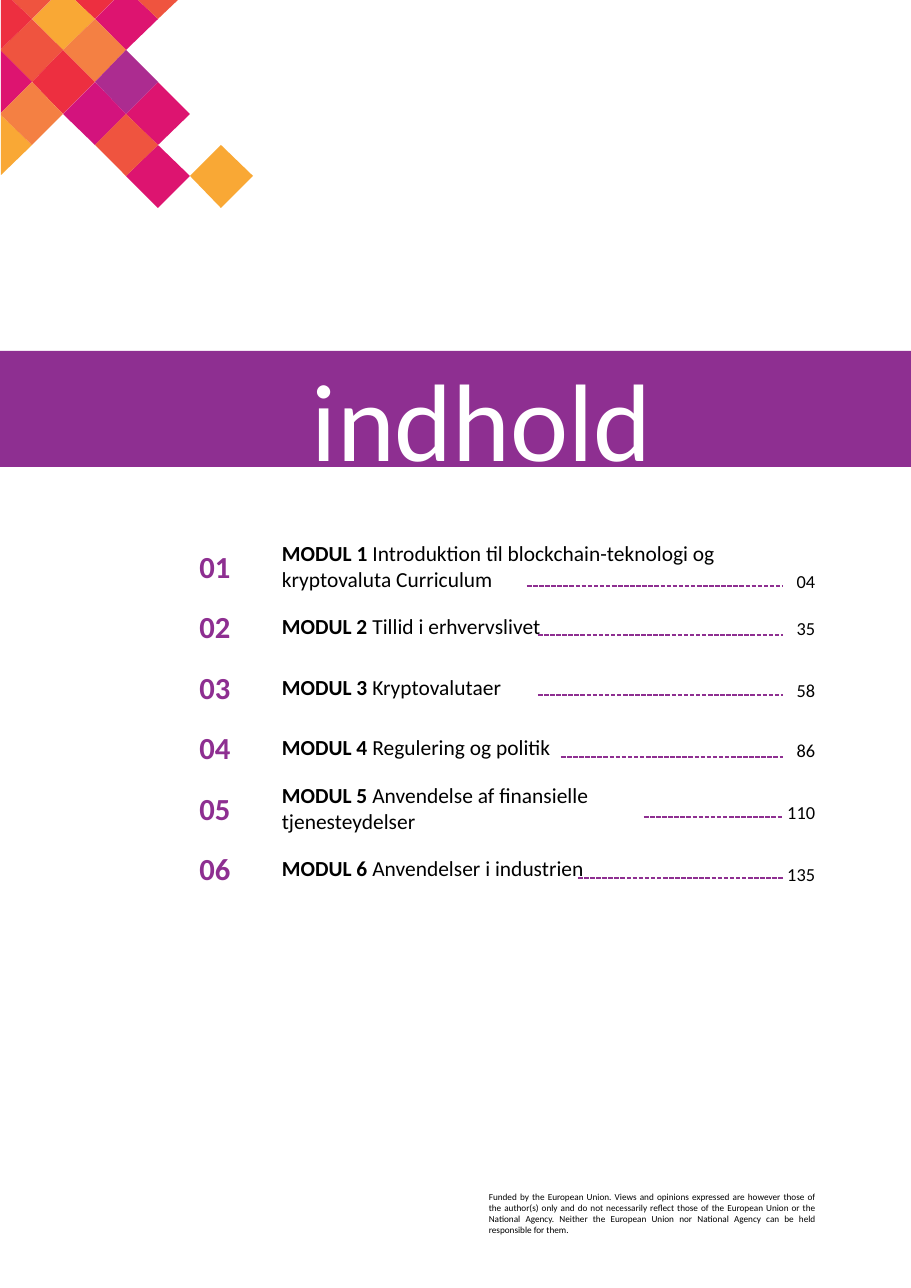
from pptx import Presentation
from pptx.dml.color import RGBColor
from pptx.enum.dml import MSO_LINE_DASH_STYLE as Dash
from pptx.enum.shapes import MSO_CONNECTOR_TYPE as Connector, MSO_SHAPE as Shape
from pptx.enum.text import MSO_ANCHOR as Anchor, PP_ALIGN as Align
from pptx.oxml.ns import qn
from pptx.util import Pt
from lxml.etree import SubElement

SCALE = 8301
PAGE_WIDTH, PAGE_HEIGHT = 911, 1288
FONT = "Calibri"
PURPLE, BLACK, WHITE = "8E2F91", "000000", "FFFFFF"
RED, PINK, ORANGE = "ED2F40", "DD1470", "EF543F"
YELLOW, APRICOT, VIOLET, MAGENTA = "F9A835", "F48043", "AC2C90", "D3137D"

TILES = [
    (3, -1, RED), (4, 0, PINK), (5, -1, ORANGE), (2, 0, YELLOW),
    (1, 1, ORANGE), (2, 2, RED), (3, 1, APRICOT), (0, 2, PINK),
    (0, 4, YELLOW), (1, 3, APRICOT), (7, 5, YELLOW), (5, 5, PINK),
    (5, 3, PINK), (4, 2, VIOLET), (3, 3, MAGENTA), (4, 4, ORANGE),
    (1, -1, ORANGE), (0, 0, RED),
]

FIRST_ROW, ROW_PITCH, ROW_HEIGHT = 545, 60.4, 42
LEADER_END = 783
MODULES = [
    ("Introduktion til blockchain-teknologi og kryptovaluta Curriculum", 479, "04", 560, 527, 586),
    ("Tillid i erhvervslivet", 427, "35", 607, 538, 635),
    ("Kryptovalutaer", 427, "58", 669, 538, 695),
    ("Regulering og politik", 427, "86", 729, 561, 757),
    ("Anvendelse af finansielle tjenesteydelser", 427, "110", 791, 644, 817),
    ("Anvendelser i industrien", 427, "135", 853, 578, 878),
]

FUNDING = (
    "Funded by the European Union. Views and opinions expressed are however "
    "those of the author(s) only and do not necessarily reflect those of the "
    "European Union or the National Agency. Neither the European Union nor "
    "National Agency can be held responsible for them."
)


def px(value):
    return round(value * SCALE)


def paint(target, color):
    target.solid()
    target.fore_color.rgb = RGBColor.from_string(color)


def finish_shape(shape, color):
    paint(shape.fill, color)
    shape.line.fill.background()
    shape.shadow.inherit = False


def add_band(page, top, height):
    band = page.shapes.add_shape(Shape.RECTANGLE, 0, px(top), px(PAGE_WIDTH), px(height))
    finish_shape(band, PURPLE)


def clip(points, axis, limit):
    kept = []
    for start, end in zip(points, points[1:] + points[:1]):
        if start[axis] >= limit:
            kept.append(start)
        if (start[axis] < limit) != (end[axis] < limit):
            share = (limit - start[axis]) / (end[axis] - start[axis])
            kept.append(tuple(a + share * (b - a) for a, b in zip(start, end)))
    return kept


def add_tile(page, column, row, color):
    corners = [(column, row - 1), (column + 1, row), (column, row + 1), (column - 1, row)]
    points = [(round(x * 253 / 8), round(19 + y * 31.5)) for x, y in corners]
    points = [(round(x), round(y)) for x, y in clip(clip(points, 0, 1), 1, 0)]
    outline = page.shapes.build_freeform(*points[0], scale=SCALE)
    outline.add_line_segments(points[1:], close=True)
    finish_shape(outline.convert_to_shape(), color)


def add_text(page, left, top, width, height, spans, size, color,
             align=Align.LEFT, anchor=Anchor.MIDDLE):
    box = page.shapes.add_textbox(px(left), px(top), px(width), px(height))
    frame = box.text_frame
    frame.word_wrap = True
    frame.vertical_anchor = anchor
    para = frame.paragraphs[0]
    para.alignment = align
    for text, bold in spans:
        span = para.add_run()
        span.text = text
        span.font.name = FONT
        span.font.size = Pt(size)
        span.font.bold = bold
        span.font.color.rgb = RGBColor.from_string(color)


def add_leader(page, left, y):
    leader = page.shapes.add_connector(
        Connector.STRAIGHT, px(left), px(y), px(LEADER_END), px(y))
    paint(leader.line.fill, PURPLE)
    leader.line.width = Pt(1)
    leader.line.dash_style = Dash.SQUARE_DOT
    SubElement(leader._element.spPr, qn("a:effectLst"))


def add_module(page, index, title, width, page_number, number_top, leader_left, leader_y):
    top = round(FIRST_ROW + index * ROW_PITCH)
    add_text(page, 176, top, 78, ROW_HEIGHT, [(f"{index + 1:02}", True)],
             20, PURPLE, Align.CENTER)
    add_text(page, 271, top, width, ROW_HEIGHT,
             [(f"MODUL {index + 1} ", True), (title, False)], 14, BLACK)
    add_text(page, 771, number_top, 55, ROW_HEIGHT, [(page_number, False)],
             12, BLACK, Align.RIGHT)
    add_leader(page, leader_left, leader_y)


def main():
    deck = Presentation()
    deck.slide_width, deck.slide_height = px(PAGE_WIDTH), px(PAGE_HEIGHT)
    page = deck.slides.add_slide(deck.slide_layouts[6])
    add_band(page, 351, 116)
    for tile in TILES:
        add_tile(page, *tile)
    add_text(page, 301, 346, 562, 170, [("indhold", False)], 72, WHITE, anchor=Anchor.TOP)
    for index, module in enumerate(MODULES):
        add_module(page, index, *module)
    add_text(page, 478, 1186, 348, 55, [(FUNDING, False)], 6, BLACK,
             Align.JUSTIFY, Anchor.TOP)
    deck.save("out.pptx")


if __name__ == "__main__":
    main()
